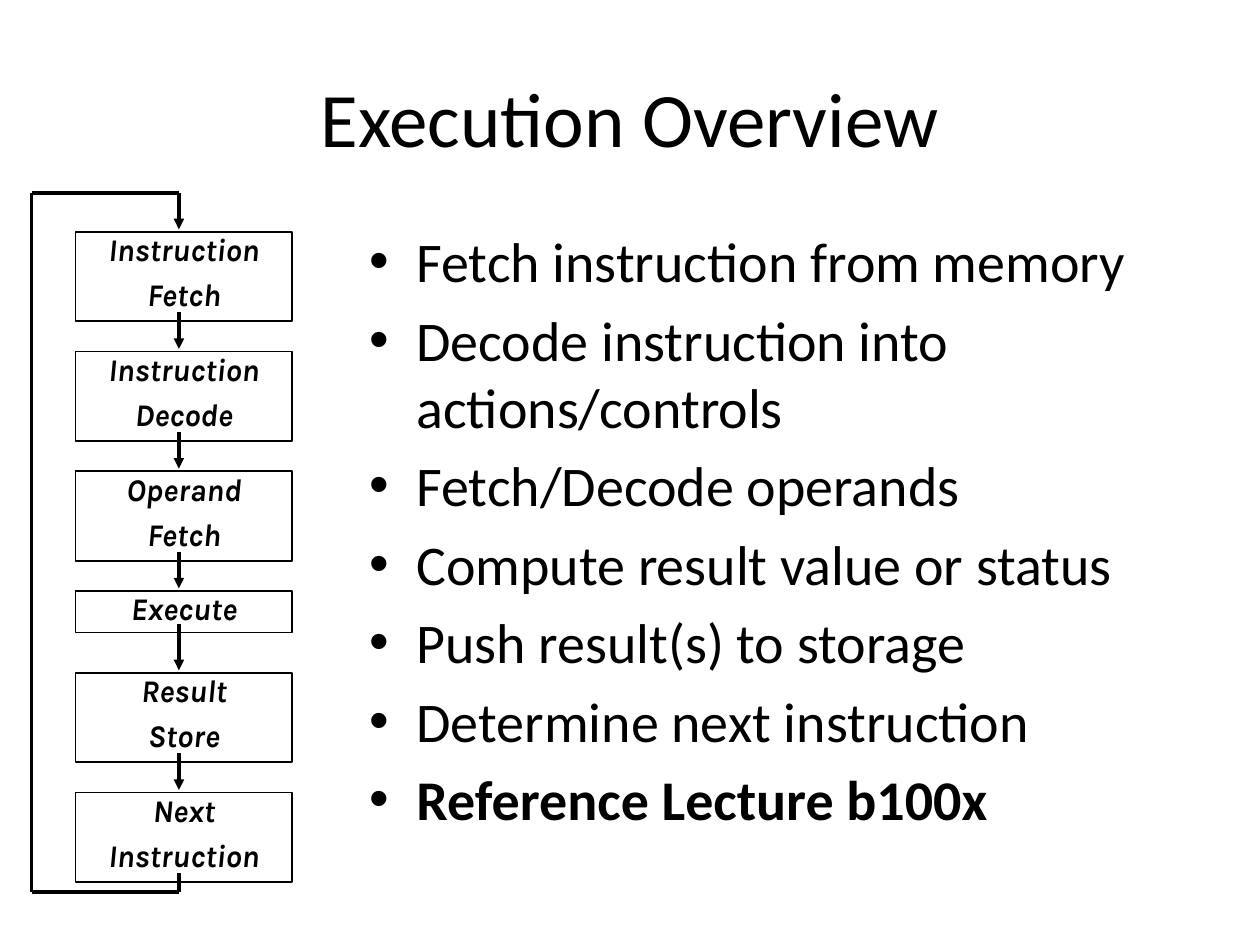
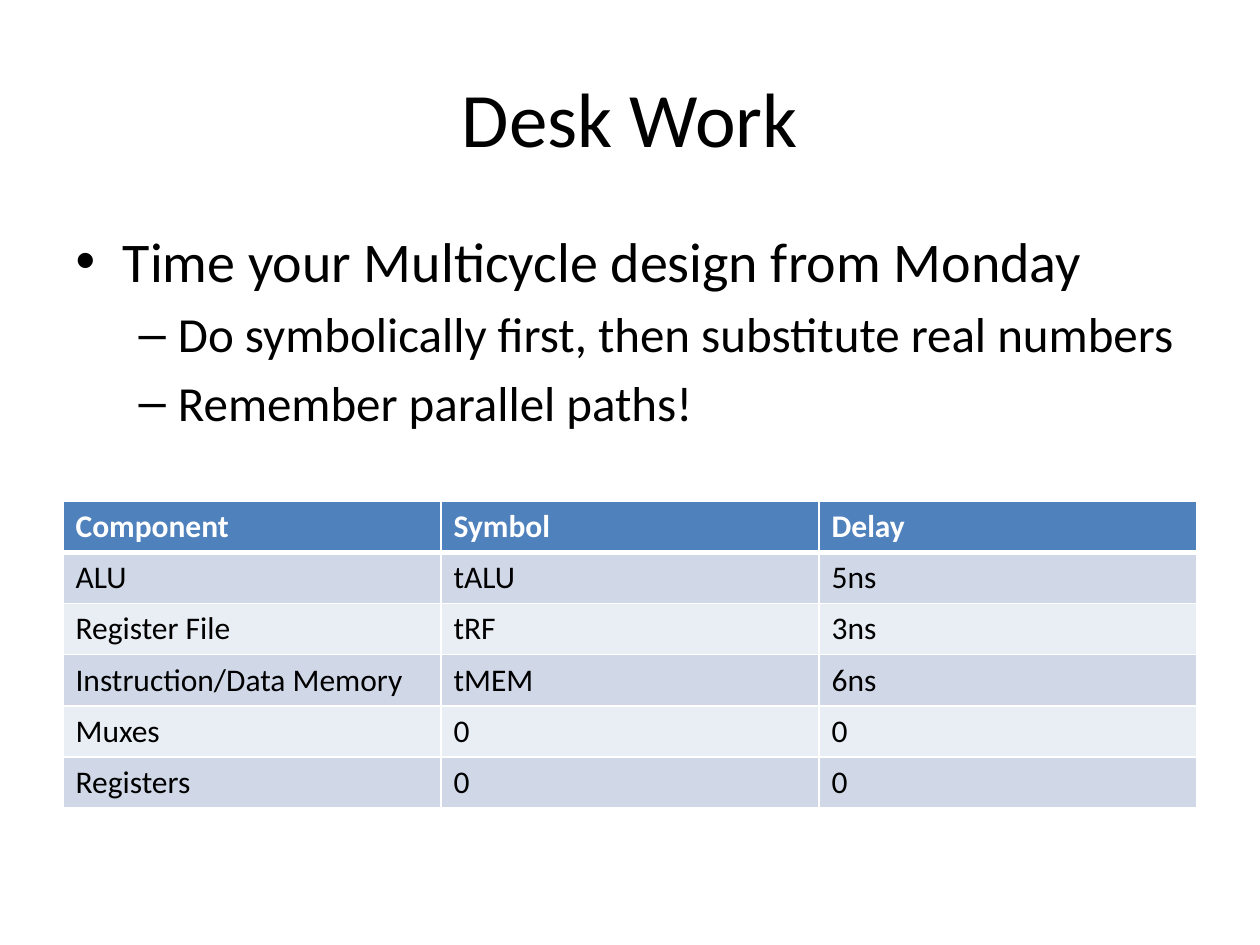
"""Build two lecture slides: an execution cycle and a timing exercise."""
from dataclasses import dataclass
from itertools import pairwise

from lxml.etree import SubElement
from pptx import Presentation
from pptx.dml.color import RGBColor
from pptx.enum.shapes import MSO_CONNECTOR, MSO_SHAPE
from pptx.enum.text import MSO_ANCHOR, PP_ALIGN
from pptx.oxml.ns import qn
from pptx.slide import Slide
from pptx.table import _Cell
from pptx.text.text import TextFrame
from pptx.util import Inches, Pt

BLACK, WHITE = "000000", "FFFFFF"
HEADER_FILL, ROW_FILLS = "4F81BD", ("D0D8E8", "E9EDF4")
BODY_FONT, STAGE_FONT = "Calibri", "Karla"
STAGE_LEFT, STAGE_WIDTH, FIRST_STAGE_TOP = 0.6, 1.72, 1.84
ARROW_X, LOOP_LEFT, LOOP_TOP, LOOP_BOTTOM = 1.42, 0.25, 1.53, 7.08
ARROW_OVERLAP, ARROW_CLEARANCE = 0.07, 0.02


@dataclass(frozen=True)
class Line:
    text: str
    size: float = 32
    level: int = 0
    bold: bool = False


@dataclass(frozen=True)
class Stage:
    words: tuple[str, ...]
    height: float = 0.71
    gap_below: float = 0.24


STAGES = (
    Stage(("Instruction", "Fetch")),
    Stage(("Instruction", "Decode")),
    Stage(("Operand", "Fetch")),
    Stage(("Execute",), height=0.33, gap_below=0.32),
    Stage(("Result", "Store")),
    Stage(("Next", "Instruction")),
)
EXECUTION_STEPS = (
    Line("Fetch instruction from memory"),
    Line("Decode instruction into actions/controls"),
    Line("Fetch/Decode operands"),
    Line("Compute result value or status"),
    Line("Push result(s) to storage"),
    Line("Determine next instruction"),
    Line("Reference Lecture b100x", bold=True),
)
DESK_TASKS = (
    Line("Time your Multicycle design from Monday"),
    Line("Do symbolically first, then substitute real numbers", size=28, level=1),
    Line("Remember parallel paths!", size=28, level=1),
)
DELAYS = (
    ("Component", "Symbol", "Delay"),
    ("ALU", "tALU", "5ns"),
    ("Register File", "tRF", "3ns"),
    ("Instruction/Data Memory", "tMEM", "6ns"),
    ("Muxes", "0", "0"),
    ("Registers", "0", "0"),
)


def rgb(color: str) -> RGBColor:
    """Turn a hex string into a colour."""
    return RGBColor.from_string(color)


def write(frame: TextFrame, lines: tuple[Line, ...], *, font: str = BODY_FONT,
          color: str = BLACK, italic: bool = False, align: PP_ALIGN | None = None,
          spacing: float | None = None, gap: float | None = None) -> None:
    """Fill a text frame with one formatted paragraph per line."""
    frame.word_wrap = True
    for index, line in enumerate(lines):
        paragraph = frame.add_paragraph() if index else frame.paragraphs[0]
        paragraph.level = line.level
        paragraph.alignment = align
        paragraph.line_spacing = spacing
        if gap is not None and index:
            paragraph.space_before = Pt(gap)
        run = paragraph.add_run()
        run.text = line.text
        run.font.name, run.font.size = font, Pt(line.size)
        run.font.bold, run.font.italic = line.bold, italic
        run.font.color.rgb = rgb(color)


def add_slide(deck: Presentation, heading: str, lines: tuple[Line, ...],
              body_box: tuple[float, float, float, float]) -> Slide:
    """Add a slide with a title and a bulleted list."""
    slide = deck.slides.add_slide(deck.slide_layouts[1])
    title, body = slide.shapes.title, slide.placeholders[1]
    for holder, box in ((title, (0.5, 0.3, 9, 1.25)), (body, body_box)):
        holder.left, holder.top, holder.width, holder.height = map(Inches, box)
    title.text_frame.vertical_anchor = MSO_ANCHOR.MIDDLE
    write(title.text_frame, (Line(heading, size=44),), align=PP_ALIGN.CENTER)
    write(body.text_frame, lines)
    return slide


def draw_stage(slide: Slide, stage: Stage, top: float) -> None:
    """Draw one outlined stage of the execution cycle."""
    box = slide.shapes.add_shape(MSO_SHAPE.RECTANGLE, Inches(STAGE_LEFT), Inches(top),
                                 Inches(STAGE_WIDTH), Inches(stage.height))
    box.shadow.inherit = False
    box.fill.background()
    box.line.color.rgb, box.line.width = rgb(BLACK), Pt(1)
    frame = box.text_frame
    frame.margin_left = frame.margin_right = Inches(0.07)
    frame.margin_top = frame.margin_bottom = Inches(0.03)
    frame.vertical_anchor = MSO_ANCHOR.TOP
    words = tuple(Line(word, size=18, bold=True) for word in stage.words)
    write(frame, words, font=STAGE_FONT, italic=True, align=PP_ALIGN.CENTER,
          spacing=0.86, gap=7.2)


def draw_line(slide: Slide, start: tuple[float, float], end: tuple[float, float],
              arrow: bool = False) -> None:
    """Draw a straight line, with an arrowhead at its end if asked."""
    connector = slide.shapes.add_connector(MSO_CONNECTOR.STRAIGHT,
                                           *map(Inches, (*start, *end)))
    connector.line.color.rgb, connector.line.width = rgb(BLACK), Pt(2)
    if arrow:
        SubElement(connector.line._get_or_add_ln(), qn("a:tailEnd"), type="triangle")
    SubElement(connector._element.spPr, qn("a:effectLst"))


def draw_cycle(slide: Slide) -> None:
    """Stack the stages, join them and lead the last back to the first."""
    top, arrow_start = FIRST_STAGE_TOP, None
    for stage in STAGES:
        draw_stage(slide, stage, top)
        if arrow_start is not None:
            draw_line(slide, (ARROW_X, arrow_start),
                      (ARROW_X, top - ARROW_CLEARANCE), arrow=True)
        arrow_start = top + stage.height - ARROW_OVERLAP
        top += stage.height + stage.gap_below
    loop = ((ARROW_X, arrow_start), (ARROW_X, LOOP_BOTTOM), (LOOP_LEFT, LOOP_BOTTOM),
            (LOOP_LEFT, LOOP_TOP), (ARROW_X, LOOP_TOP))
    for start, end in pairwise(loop):
        draw_line(slide, start, end)
    draw_line(slide, loop[-1], (ARROW_X, FIRST_STAGE_TOP - ARROW_CLEARANCE), arrow=True)


def set_borders(cell: _Cell, top: float, bottom: float) -> None:
    """Give a cell white borders, with its top and bottom widths in points."""
    properties = cell._tc.get_or_add_tcPr()
    widths = {"a:lnL": 1, "a:lnR": 1, "a:lnT": top, "a:lnB": bottom}
    for index, (side, width) in enumerate(widths.items()):
        border = properties.makeelement(qn(side), {"w": str(Pt(width))})
        fill = SubElement(border, qn("a:solidFill"))
        SubElement(fill, qn("a:srgbClr"), val=WHITE)
        properties.insert(index, border)


def draw_delays(slide: Slide) -> None:
    """Draw the table of component delays."""
    table = slide.shapes.add_table(len(DELAYS), len(DELAYS[0]), Inches(0.5), Inches(3.98),
                                   Inches(9), Inches(2.43)).table
    for row, values in enumerate(DELAYS):
        header = row == 0
        for column, value in enumerate(values):
            cell = table.cell(row, column)
            cell.fill.solid()
            cell.fill.fore_color.rgb = rgb(HEADER_FILL if header else ROW_FILLS[(row - 1) % 2])
            set_borders(cell, top=3 if row == 1 else 1, bottom=3 if header else 1)
            write(cell.text_frame, (Line(value, size=18, bold=header),),
                  color=WHITE if header else BLACK)


def main() -> None:
    """Build and save the deck."""
    deck = Presentation()
    deck.slide_width, deck.slide_height = Inches(10), Inches(7.5)
    draw_cycle(add_slide(deck, "Execution Overview", EXECUTION_STEPS,
                         (2.83, 1.75, 6.67, 5.33)))
    draw_delays(add_slide(deck, "Desk Work", DESK_TASKS, (0.5, 1.75, 9, 4.95)))
    deck.save("out.pptx")


if __name__ == "__main__":
    main()
